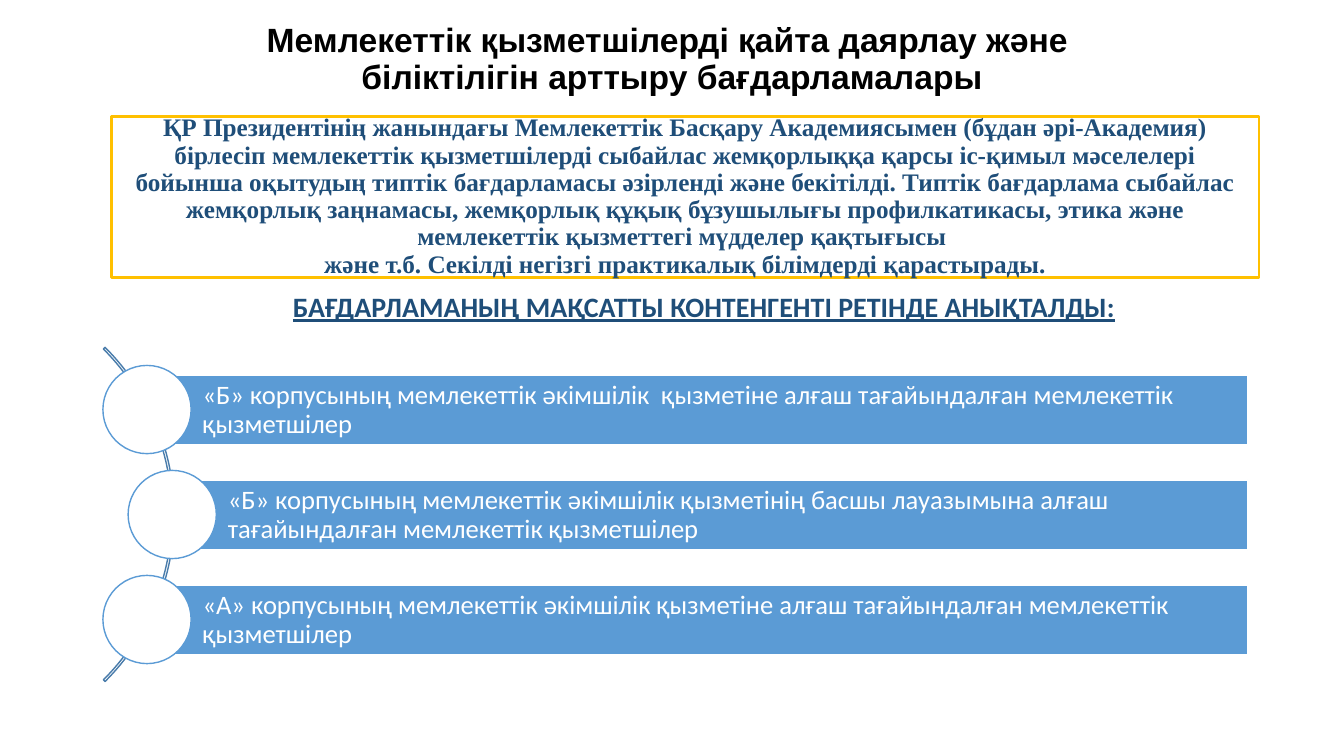
import pptx
import pptx.util
import pptx.dml.color
import pptx.enum.shapes
import pptx.enum.text

RGBColor = pptx.dml.color.RGBColor
MSO_SHAPE = pptx.enum.shapes.MSO_SHAPE
PP_ALIGN = pptx.enum.text.PP_ALIGN

BLACK = RGBColor(0x00, 0x00, 0x00)
WHITE = RGBColor(0xFF, 0xFF, 0xFF)
NAVY = RGBColor(0x1F, 0x4E, 0x79)
BLUE = RGBColor(0x5B, 0x9B, 0xD5)
STEEL = RGBColor(0x49, 0x7C, 0xAB)
GOLD = RGBColor(0xFF, 0xC0, 0x00)

TITLE = "Мемлекеттік қызметшілерді қайта даярлау және \vбіліктілігін арттыру бағдарламалары"
SUMMARY = (
    "ҚР Президентінің жанындағы Мемлекеттік Басқару Академиясымен "
    "(бұдан әрі-Академия) бірлесіп мемлекеттік қызметшілерді сыбайлас "
    "жемқорлыққа қарсы іс-қимыл мәселелері бойынша оқытудың типтік "
    "бағдарламасы әзірленді және бекітілді. Типтік бағдарлама сыбайлас "
    "жемқорлық заңнамасы, жемқорлық құқық бұзушылығы профилкатикасы, "
    "этика және мемлекеттік қызметтегі мүдделер қақтығысы \n"
    "және т.б. Секілді негізгі практикалық білімдерді қарастырады."
)
SUBTITLE = "БАҒДАРЛАМАНЫҢ МАҚСАТТЫ КОНТЕНГЕНТІ РЕТІНДЕ АНЫҚТАЛДЫ:"
GROUPS = [
    "«Б» корпусының мемлекеттік әкімшілік  қызметіне алғаш тағайындалған мемлекеттік қызметшілер",
    "«Б» корпусының мемлекеттік әкімшілік қызметінің басшы лауазымына алғаш тағайындалған мемлекеттік қызметшілер",
    "«А» корпусының мемлекеттік әкімшілік қызметіне алғаш тағайындалған мемлекеттік қызметшілер",
]


def px(n):
    return pptx.util.Emu(n * 9525)


def add_shape(s, kind, box, fill, line, width):
    sp = s.shapes.add_shape(kind, *map(px, box))
    sp.shadow.inherit = False
    if fill is None:
        sp.fill.background()
    else:
        sp.fill.solid()
        sp.fill.fore_color.rgb = fill
    sp.line.color.rgb = line
    sp.line.width = pptx.util.Pt(width)
    return sp


def set_text(sp, text, font, size, color, align=PP_ALIGN.CENTER, bold=True, underline=False):
    tf = sp.text_frame
    tf.word_wrap = True
    tf.vertical_anchor = pptx.enum.text.MSO_ANCHOR.MIDDLE
    tf.text = text
    for p in tf.paragraphs:
        p.alignment = align
        p.line_spacing = 0.9
        for r in p.runs:
            r.font.name = font
            r.font.size = pptx.util.Pt(size)
            r.font.color.rgb = color
            r.font.bold = bold
            r.font.underline = underline
    return tf


def add_title(s, box):
    sp = s.shapes.add_textbox(*map(px, box))
    tf = set_text(sp, TITLE, "Arial", 24, BLACK)
    tf.margin_bottom = px(39)


def add_summary(s, box):
    sp = add_shape(s, MSO_SHAPE.RECTANGLE, box, None, GOLD, 2)
    set_text(sp, SUMMARY, "Times New Roman", 18, NAVY)


def add_subtitle(s, box):
    sp = s.shapes.add_textbox(*map(px, box))
    set_text(sp, SUBTITLE, "Calibri", 20, NAVY, underline=True)


def add_groups(s, box):
    x, y, w, h = box
    arc_size, bar_h, circle, step, bulge = 450, 67, 84, 100, 24
    arc_box = (x - 382, y + (h - arc_size) // 2, arc_size, arc_size)
    arc = add_shape(s, MSO_SHAPE.BLOCK_ARC, arc_box, None, STEEL, 1)
    for i, value in enumerate((189, 27, 0.005)):
        arc.adjustments[i] = value
    for i, text in enumerate(GROUPS):
        left = x + circle // 2 + (bulge if i == 1 else 0)
        mid = y + h // 2 + (i - 1) * step
        bar_box = (left, mid - bar_h // 2, x + w - left, bar_h)
        bar = add_shape(s, MSO_SHAPE.RECTANGLE, bar_box, BLUE, WHITE, 1)
        tf = set_text(bar, text, "Calibri", 19, WHITE, PP_ALIGN.LEFT, bold=False)
        tf.margin_left = px(53)
        tf.margin_right = tf.margin_top = tf.margin_bottom = px(5)
        circle_box = (left - circle // 2, mid - circle // 2, circle, circle)
        add_shape(s, MSO_SHAPE.OVAL, circle_box, WHITE, BLUE, 1)


def main():
    prs = pptx.Presentation()
    prs.slide_width, prs.slide_height = px(1280), px(720)
    s = prs.slides.add_slide(prs.slide_layouts[6])
    add_title(s, (88, 38, 1104, 73))
    add_summary(s, (106, 111, 1093, 153))
    add_subtitle(s, (121, 265, 1099, 58))
    add_groups(s, (98, 330, 1090, 320))
    prs.save("out.pptx")


if __name__ == "__main__":
    main()
